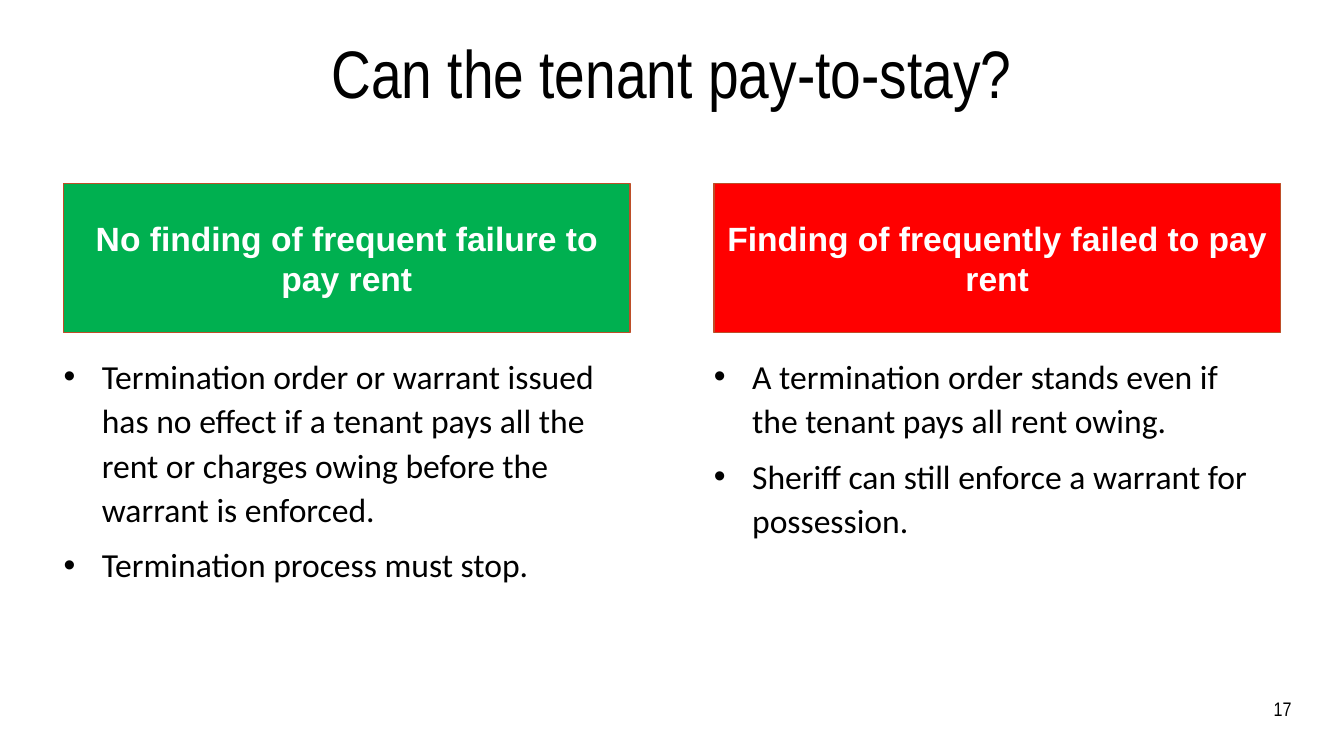
from dataclasses import dataclass

from lxml import etree
from pptx import Presentation
from pptx.dml.color import RGBColor
from pptx.enum.shapes import MSO_SHAPE
from pptx.enum.text import MSO_ANCHOR, PP_ALIGN
from pptx.oxml.ns import qn
from pptx.util import Inches, Pt

RECTANGLE = MSO_SHAPE.RECTANGLE
TOP, MIDDLE, BOTTOM = MSO_ANCHOR.TOP, MSO_ANCHOR.MIDDLE, MSO_ANCHOR.BOTTOM
LEFT, CENTER, RIGHT = PP_ALIGN.LEFT, PP_ALIGN.CENTER, PP_ALIGN.RIGHT

SLIDE_WIDTH, SLIDE_HEIGHT = 13.33, 7.5
COLUMN_START, COLUMN_STEP, BANNER_WIDTH = 0.63, 6.45, 5.62
BANNER_TOP, BANNER_HEIGHT = 1.82, 1.48
BULLETS_TOP = 3.49
BULLET_INDENT = 0.38


@dataclass(frozen=True)
class Style:
    font: str
    size: int
    color: str
    bold: bool = False


@dataclass(frozen=True)
class Theme:
    title: Style = Style("Arial Narrow", 48, "000000")
    banner: Style = Style("Arial", 24, "FFFFFF", True)
    body: Style = Style("Calibri", 24, "000000")
    number: Style = Style("Arial Narrow", 14, "000000")
    allowed: str = "00B050"
    refused: str = "FF0000"
    outline: str = "BD4E28"


THEME = Theme()

COLUMNS = [
    (
        "No finding of frequent failure to pay rent",
        THEME.allowed,
        5.79,
        3.08,
        [
            "Termination order or warrant issued has no effect if a tenant pays "
            "all the rent or charges owing before the warrant is enforced.",
            "Termination process must stop.",
        ],
    ),
    (
        "Finding of frequently failed to pay rent",
        THEME.refused,
        5.35,
        2.71,
        [
            "A termination order stands even if the tenant pays all rent owing.",
            "Sheriff can still enforce a warrant for possession.",
        ],
    ),
]


def write(para, text, style, align):
    para.alignment = align
    span = para.add_run()
    span.text = text
    span.font.name = style.font
    span.font.size = Pt(style.size)
    span.font.bold = style.bold
    span.font.color.rgb = RGBColor.from_string(style.color)


def add_text_frame(page, left, top, width, height, anchor=TOP):
    box = page.shapes.add_textbox(*map(Inches, (left, top, width, height)))
    frame = box.text_frame
    frame.word_wrap = True
    frame.vertical_anchor = anchor
    frame.margin_left = frame.margin_right = 0
    frame.margin_top = frame.margin_bottom = 0
    return frame


def add_title(page, text):
    para = add_text_frame(page, 0.52, 0.4, 12.28, 0.73).paragraphs[0]
    para.line_spacing = 0.9
    write(para, text, THEME.title, CENTER)


def add_page_number(page, text):
    frame = add_text_frame(page, 12.42, 6.91, 0.39, 0.24, BOTTOM)
    write(frame.paragraphs[0], text, THEME.number, RIGHT)


def add_banner(page, left, text, fill):
    area = (left, BANNER_TOP, BANNER_WIDTH, BANNER_HEIGHT)
    banner = page.shapes.add_shape(RECTANGLE, *map(Inches, area))
    banner.shadow.inherit = False
    banner.fill.solid()
    banner.fill.fore_color.rgb = RGBColor.from_string(fill)
    banner.line.color.rgb = RGBColor.from_string(THEME.outline)
    banner.line.width = Pt(1)
    frame = banner.text_frame
    frame.word_wrap = True
    frame.vertical_anchor = MIDDLE
    write(frame.paragraphs[0], text, THEME.banner, CENTER)


def set_bullet(para):
    properties = para._p.get_or_add_pPr()
    properties.set("marL", str(Inches(BULLET_INDENT)))
    properties.set("indent", str(-Inches(BULLET_INDENT)))
    etree.SubElement(properties, qn("a:buFont")).set("typeface", "Arial")
    etree.SubElement(properties, qn("a:buChar")).set("char", "•")


def add_bullets(page, left, width, height, items):
    frame = add_text_frame(page, left, BULLETS_TOP, width, height)
    for index, item in enumerate(items):
        para = frame.add_paragraph() if index else frame.paragraphs[0]
        set_bullet(para)
        para.line_spacing = 1.1
        para.space_before = Pt(8 if index else 0)
        write(para, item, THEME.body, LEFT)


def main():
    deck = Presentation()
    deck.slide_width = Inches(SLIDE_WIDTH)
    deck.slide_height = Inches(SLIDE_HEIGHT)
    page = deck.slides.add_slide(deck.slide_layouts[6])
    add_title(page, "Can the tenant pay-to-stay?")
    for index, (heading, fill, width, height, items) in enumerate(COLUMNS):
        left = COLUMN_START + index * COLUMN_STEP
        add_banner(page, left, heading, fill)
        add_bullets(page, left, width, height, items)
    add_page_number(page, "17")
    deck.save("out.pptx")


if __name__ == "__main__":
    main()
